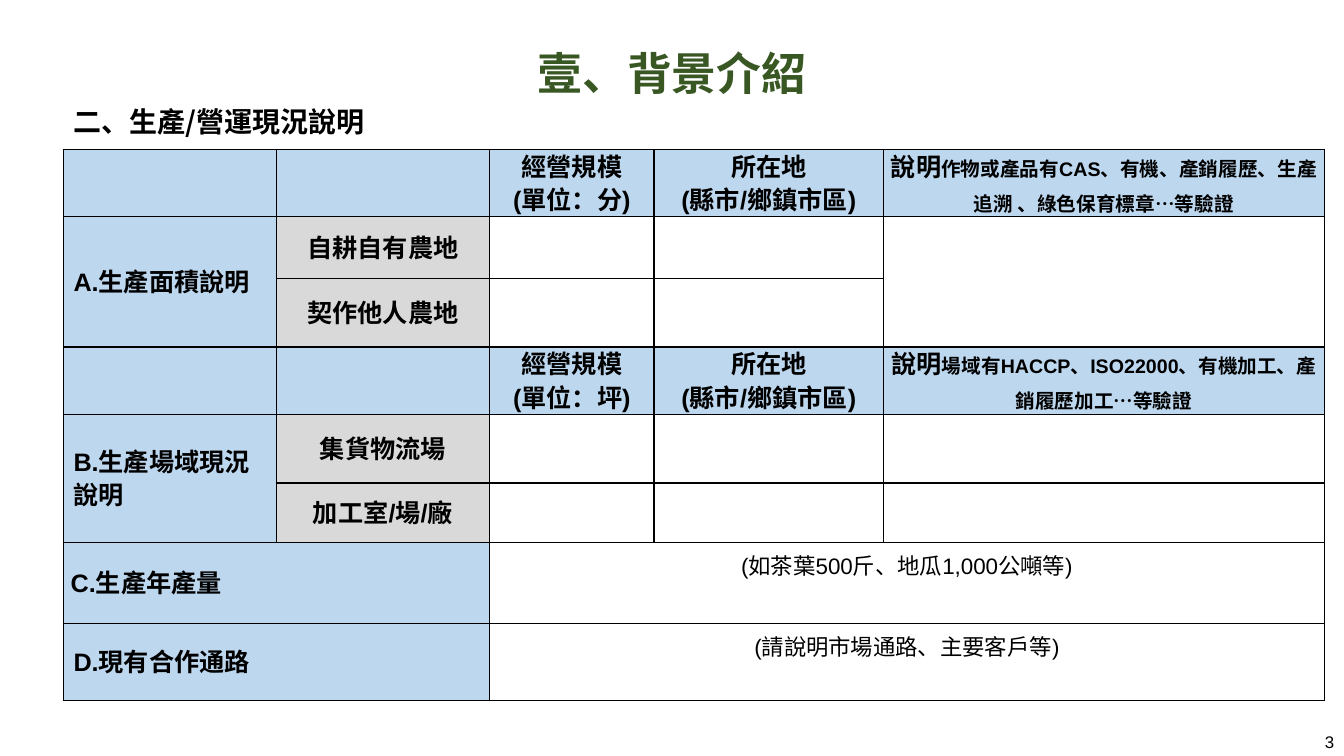
from lxml.etree import SubElement
from pptx import Presentation
from pptx.dml.color import RGBColor
from pptx.enum.text import MSO_ANCHOR as Anchor, PP_ALIGN as Align
from pptx.oxml.ns import qn
from pptx.util import Cm, Pt

BLACK = RGBColor(0x00, 0x00, 0x00)
GREEN = RGBColor(0x38, 0x57, 0x23)
BLUE = RGBColor(0xBD, 0xD7, 0xEE)
GRAY = RGBColor(0xD9, 0xD9, 0xD9)
LATIN_FONT = "Arial"
CJK_FONT = "Noto Sans CJK SC"

COLUMN_WIDTHS = [5.36, 5.38, 4.14, 5.79, 11.1]
ROW_HEIGHTS = [1.69, 1.56, 1.72, 1.69, 1.73, 1.5, 2.04, 1.95]
# First row, first column, last row, last column
MERGES = [(1, 0, 2, 0), (1, 4, 2, 4), (4, 0, 5, 0),
          (6, 0, 6, 1), (6, 2, 6, 4), (7, 0, 7, 1), (7, 2, 7, 4)]
# Header row, unit of scale, kinds of certification
HEADERS = [(0, "分", "作物或產品有CAS、有機、產銷履歷、生產追溯 、綠色保育標章…等驗證"),
           (3, "坪", "場域有HACCP、ISO22000、有機加工、產銷履歷加工…等驗證")]
SECTIONS = [(1, "A.生產面積說明"), (4, "B.生產場域現況說明"),
            (6, "C.生產年產量"), (7, "D.現有合作通路")]
SITES = [(1, "自耕自有農地"), (2, "契作他人農地"),
         (4, "集貨物流場"), (5, "加工室/場/廠")]
HINTS = [(6, "(如茶葉500斤、地瓜1,000公噸等)"), (7, "(請說明市場通路、主要客戶等)")]


def add_run(paragraph, text, size=18, bold=True, color=BLACK, font=LATIN_FONT):
    run = paragraph.add_run()
    run.text = text
    run.font.size = Pt(size)
    run.font.bold = bold
    run.font.name = font
    run.font.color.rgb = color
    east_asian = SubElement(run.font._element, qn("a:ea"))
    east_asian.set("typeface", CJK_FONT)


def write_text(frame, lines, align=Align.LEFT, spacing=None, after=None, **run_format):
    """Write one paragraph per line; a line is a text or a list of (text, size)."""
    frame.word_wrap = True
    for index, line in enumerate(lines):
        paragraph = frame.paragraphs[0] if index == 0 else frame.add_paragraph()
        paragraph.alignment = align
        if spacing:
            paragraph.line_spacing = Pt(spacing)
        if after:
            paragraph.space_after = Pt(after)
        if isinstance(line, str):
            add_run(paragraph, line, **run_format)
        else:
            for text, size in line:
                add_run(paragraph, text, size=size)


def add_text_box(slide, left, top, width, height, text, anchor=Anchor.TOP, **text_format):
    box = slide.shapes.add_textbox(Cm(left), Cm(top), Cm(width), Cm(height))
    box.text_frame.vertical_anchor = anchor
    write_text(box.text_frame, [text], **text_format)


def set_borders(cell):
    properties = cell._tc.get_or_add_tcPr()
    for side in ("lnL", "lnR", "lnT", "lnB"):
        line = SubElement(properties, qn(f"a:{side}"), w=str(Pt(1)))
        fill = SubElement(line, qn("a:solidFill"))
        SubElement(fill, qn("a:srgbClr"), val=str(BLACK))


def fill_cell(cell, color):
    cell.fill.solid()
    cell.fill.fore_color.rgb = color


def write_cell(cell, lines, align=Align.CENTER, anchor=Anchor.MIDDLE, tight=False, **run_format):
    cell.vertical_anchor = anchor
    if tight:
        cell.margin_left = cell.margin_right = Cm(0.18)
        cell.margin_top = cell.margin_bottom = 0
    write_text(cell.text_frame, lines, align=align, spacing=24, **run_format)


def add_grid(slide, left, top):
    """Add the bordered table with its merged cells."""
    table = slide.shapes.add_table(
        len(ROW_HEIGHTS), len(COLUMN_WIDTHS), Cm(left), Cm(top),
        Cm(sum(COLUMN_WIDTHS)), Cm(sum(ROW_HEIGHTS))).table
    table.first_row = table.horz_banding = False
    for column, width in zip(table.columns, COLUMN_WIDTHS):
        column.width = Cm(width)
    for row, height in zip(table.rows, ROW_HEIGHTS):
        row.height = Cm(height)
    for cell in table.iter_cells():
        set_borders(cell)
        cell.fill.background()
    for first_row, first_column, last_row, last_column in MERGES:
        table.cell(first_row, first_column).merge(table.cell(last_row, last_column))
    return table


def fill_grid(table):
    # Header rows
    for row, unit, certification in HEADERS:
        titles = [["經營規模", f"(單位：{unit})"],
                  ["所在地", "(縣市/鄉鎮市區)"],
                  [[("說明", 18), (certification, 14)]]]
        for column, lines in enumerate(titles, start=2):
            write_cell(table.cell(row, column), lines, tight=True)
        for column in range(len(COLUMN_WIDTHS)):
            fill_cell(table.cell(row, column), BLUE)

    # Section labels
    for row, label in SECTIONS:
        write_cell(table.cell(row, 0), [label], align=Align.LEFT, tight=row == 6)
        fill_cell(table.cell(row, 0), BLUE)

    # Kinds of site
    for row, label in SITES:
        write_cell(table.cell(row, 1), [label], tight=row > 3)
        fill_cell(table.cell(row, 1), GRAY)

    # Hints for the open answers
    for row, hint in HINTS:
        write_cell(table.cell(row, 2), [hint], anchor=Anchor.TOP, size=16, bold=False)


def main():
    presentation = Presentation()
    presentation.slide_width = Cm(33.87)
    presentation.slide_height = Cm(19.05)
    slide = presentation.slides.add_slide(presentation.slide_layouts[6])

    # Title and page number
    add_text_box(slide, 0, 1.02, 33.87, 1.63, "壹、背景介紹",
                 align=Align.CENTER, size=32, color=GREEN, font=CJK_FONT)
    add_text_box(slide, 26.25, 18.36, 7.62, 0.69, "3", anchor=Anchor.MIDDLE,
                 align=Align.RIGHT, size=12, bold=False)

    # Table
    fill_grid(add_grid(slide, 1.6, 3.77))

    # Section heading
    add_text_box(slide, 1.6, 2.57, 13.51, 1.04, "二、生產/營運現況說明",
                 spacing=22, after=6, size=20, font=CJK_FONT)

    presentation.save("out.pptx")


if __name__ == "__main__":
    main()
